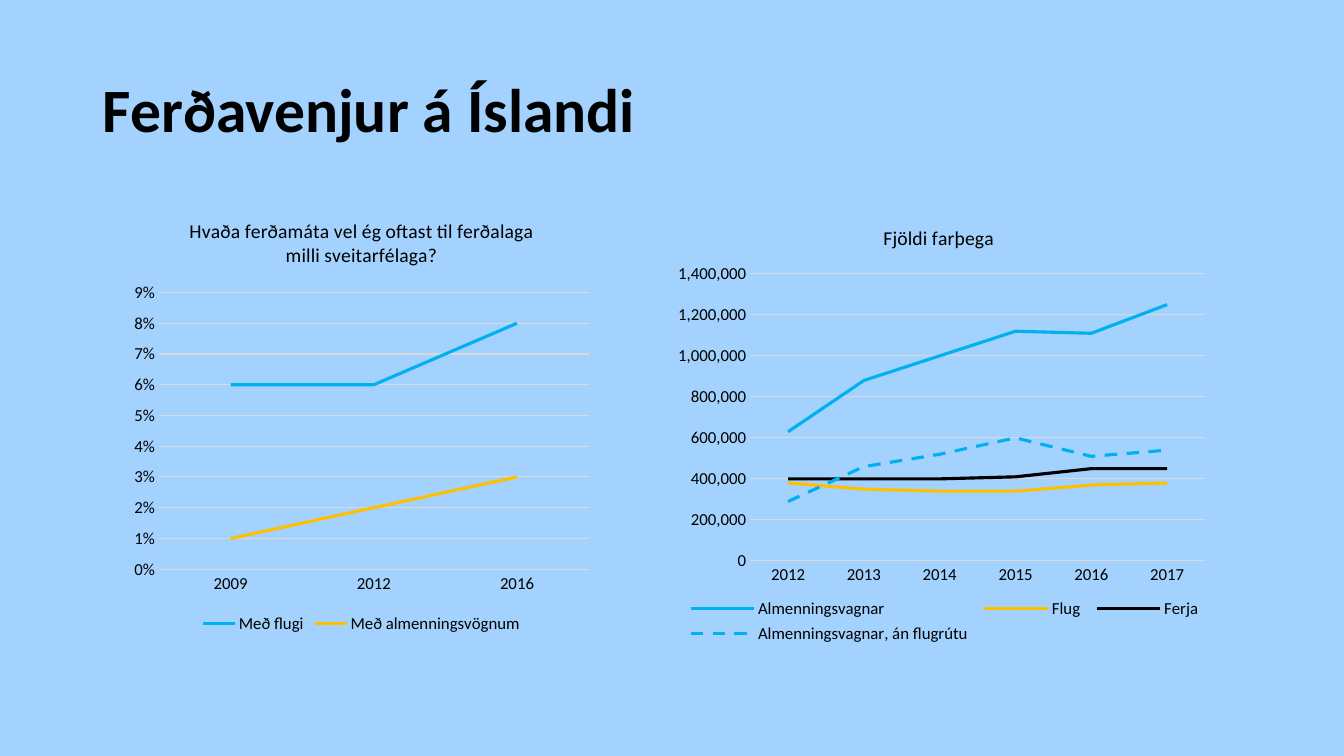
from dataclasses import dataclass

from pptx import Presentation
from pptx.chart.data import CategoryChartData
from pptx.dml.color import RGBColor
from pptx.enum.chart import XL_CHART_TYPE, XL_LEGEND_POSITION, XL_TICK_MARK
from pptx.enum.dml import MSO_LINE
from pptx.enum.text import MSO_ANCHOR, MSO_AUTO_SIZE, PP_ALIGN
from pptx.oxml import parse_xml
from pptx.oxml.ns import nsdecls, qn
from pptx.util import Inches, Pt


@dataclass(frozen=True)
class Theme:
    font: str = "Calibri"
    background: str = "A3D2FE"
    text: str = "000000"
    grid: str = "D9D9D9"
    blue: str = "00B0F0"
    amber: str = "FFC000"
    black: str = "000000"
    title_size: float = 44
    chart_title_size: float = 14
    label_size: float = 12
    grid_width: float = 0.75
    series_width: float = 2.25


class SlideBuilder:
    def __init__(self, prs, theme):
        self.prs, self.theme = prs, theme
        self.s = prs.slides.add_slide(prs.slide_layouts[5])
        fill = self.s.background.fill
        fill.solid()
        fill.fore_color.rgb = RGBColor.from_string(theme.background)

    def box(self, left, top, width, height):
        """Turn percentages of the slide's size into lengths."""
        w, h = self.prs.slide_width, self.prs.slide_height
        return [int(share * full / 100) for share, full in
                zip((left, top, width, height), (w, h, w, h))]

    def style_font(self, font, size, bold=False):
        font.name, font.size, font.bold = self.theme.font, Pt(size), bold
        font.color.rgb = RGBColor.from_string(self.theme.text)

    def style_line(self, line, color, width):
        line.color.rgb = RGBColor.from_string(color)
        line.width = Pt(width)

    def title(self, text, *area):
        sp = self.s.shapes.title
        sp.left, sp.top, sp.width, sp.height = self.box(*area)
        tf = sp.text_frame
        tf.word_wrap, tf.auto_size = True, MSO_AUTO_SIZE.NONE
        tf.vertical_anchor = MSO_ANCHOR.MIDDLE
        p = tf.paragraphs[0]
        p.alignment, p.line_spacing = PP_ALIGN.LEFT, 0.9
        r = p.add_run()
        r.text = text
        self.style_font(r.font, self.theme.title_size, bold=True)

    def line_chart(self, area, title, categories, series, number_format,
                   top_value, step, plot=None, legend=None):
        """Add a line chart; series holds (name, color, dashed, values)."""
        data = CategoryChartData(number_format=number_format)
        data.categories = categories
        for name, _, _, values in series:
            data.add_series(name, values)
        chart = self.s.shapes.add_chart(
            XL_CHART_TYPE.LINE, *self.box(*area), data).chart
        self.style_font(chart.font, self.theme.label_size)

        chart.has_title = True
        chart.chart_title.include_in_layout = False
        r = chart.chart_title.text_frame.paragraphs[0].add_run()
        r.text = title
        self.style_font(r.font, self.theme.chart_title_size)

        chart.has_legend = True
        chart.legend.position = XL_LEGEND_POSITION.BOTTOM
        chart.legend.include_in_layout = False
        self.style_font(chart.legend.font, self.theme.label_size)

        self.axes(chart, number_format, top_value, step)
        for line, (_, color, dashed, _) in zip(chart.plots[0].series, series):
            line.smooth = False
            self.style_line(line.format.line, color, self.theme.series_width)
            if dashed:
                line.format.line.dash_style = MSO_LINE.DASH
        self.clear_backgrounds(chart)
        body = chart.element.find(qn("c:chart"))
        if plot:
            self.place(body.find(qn("c:plotArea")), 0, plot,
                       '<c:layoutTarget val="inner"/>')
        if legend:
            self.place(body.find(qn("c:legend")), 1, legend)

    def axes(self, chart, number_format, top_value, step):
        theme = self.theme
        for axis in (chart.category_axis, chart.value_axis):
            axis.major_tick_mark = axis.minor_tick_mark = XL_TICK_MARK.NONE
            self.style_font(axis.tick_labels.font, theme.label_size)
        self.style_line(chart.category_axis.format.line, theme.grid, theme.grid_width)
        axis = chart.value_axis
        axis.minimum_scale, axis.maximum_scale, axis.major_unit = 0, top_value, step
        axis.tick_labels.number_format = number_format
        axis.tick_labels.number_format_is_linked = False
        axis.format.line.fill.background()
        axis.has_major_gridlines = True
        self.style_line(axis.major_gridlines.format.line, theme.grid, theme.grid_width)

    def clear_backgrounds(self, chart):
        clear = (f'<c:spPr {nsdecls("c", "a")}><a:noFill/>'
                 '<a:ln><a:noFill/></a:ln></c:spPr>')
        body = chart.element.find(qn("c:chart"))
        body.addnext(parse_xml(clear))
        body.find(qn("c:plotArea")).append(parse_xml(clear))

    def place(self, part, index, area, target=""):
        """Place a chart part by percentages of the chart's size."""
        for layout in part.findall(qn("c:layout")):
            part.remove(layout)
        modes = "".join(f'<c:{side}Mode val="edge"/>' for side in "xy")
        sizes = "".join(f'<c:{key} val="{share / 100}"/>'
                        for key, share in zip("xywh", area))
        part.insert(index, parse_xml(
            f'<c:layout {nsdecls("c")}><c:manualLayout>{target}{modes}{sizes}'
            '</c:manualLayout></c:layout>'))


def main():
    prs = Presentation()
    prs.slide_width, prs.slide_height = Inches(13.33), Inches(7.5)
    theme = Theme()
    slide = SlideBuilder(prs, theme)
    slide.title("Ferðavenjur á Íslandi", 6.9, 5.3, 86.3, 19.3)
    slide.line_chart(
        (9.3, 26.4, 35.2, 57.9),
        "Hvaða ferðamáta vel ég oftast til ferðalaga milli sveitarfélaga?",
        ["2009", "2012", "2016"],
        [("Með flugi", theme.blue, False, (0.06, 0.06, 0.08)),
         ("Með almenningsvögnum", theme.amber, False, (0.01, 0.02, 0.03))],
        "0%", 0.09, 0.01)
    slide.line_chart(
        (48.9, 27.3, 41.9, 60.3),
        "Fjöldi farþega",
        [str(year) for year in range(2012, 2018)],
        [("Almenningsvagnar", theme.blue, False,
          (630000, 880000, 1000000, 1120000, 1110000, 1250000)),
         ("Flug", theme.amber, False,
          (380000, 350000, 340000, 340000, 370000, 380000)),
         ("Ferja", theme.black, False,
          (400000, 400000, 400000, 410000, 450000, 450000)),
         ("Almenningsvagnar, án flugrútu", theme.blue, True,
          (290000, 460000, 520000, 600000, 510000, 540000))],
        "#,##0", 1400000, 200000,
        plot=(16.5, 14.8, 80.8, 63), legend=(4, 85, 94, 12))
    prs.save("out.pptx")


if __name__ == "__main__":
    main()
